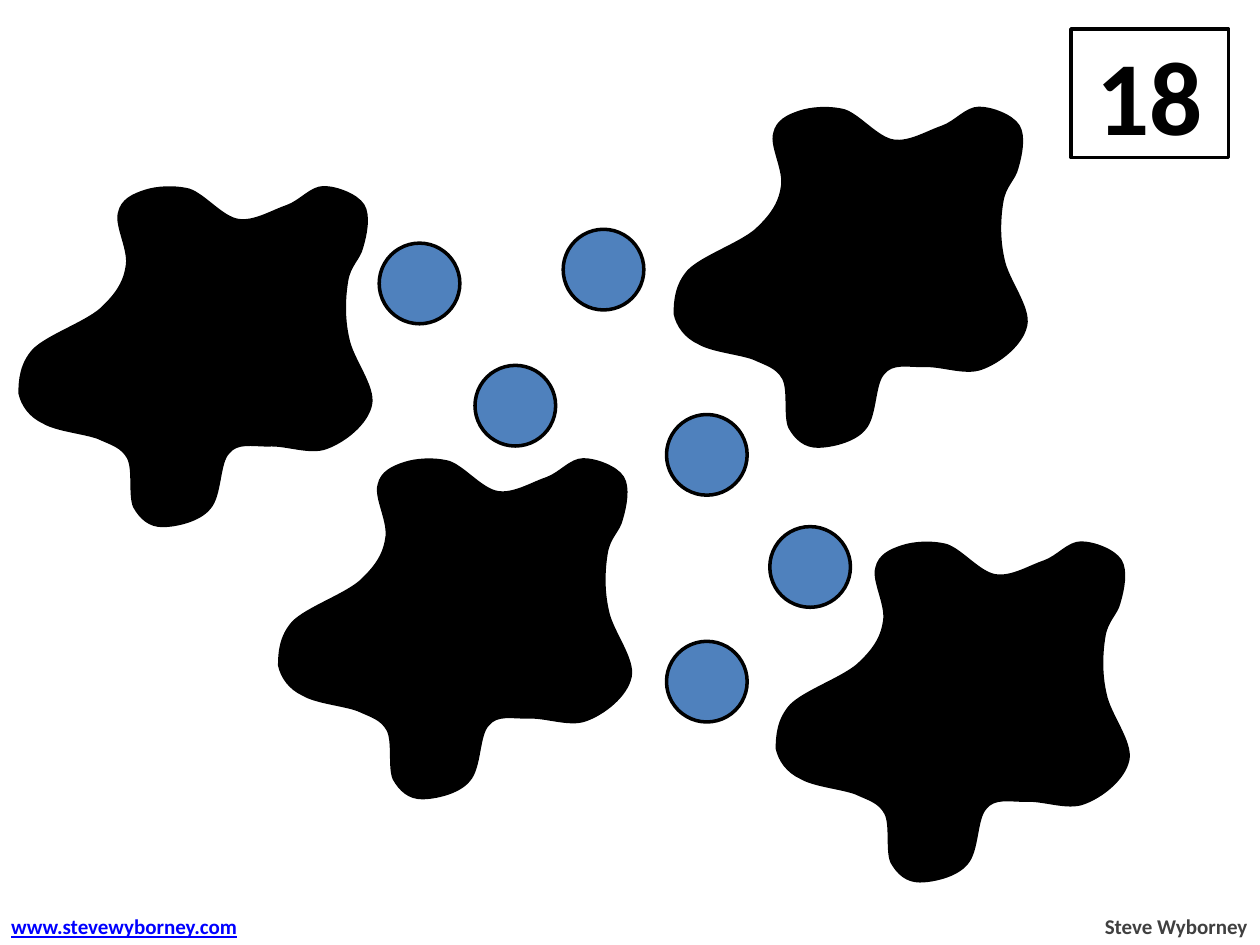
from lxml import etree
from pptx import Presentation
from pptx.dml.color import RGBColor
from pptx.enum.shapes import MSO_SHAPE
from pptx.enum.text import MSO_ANCHOR, PP_ALIGN
from pptx.oxml.ns import qn
from pptx.util import Inches, Pt

COLORS = {"black": "000000", "white": "FFFFFF", "dot": "4F81BD",
          "web": "0000FF", "author": "404040"}
FONT = "Calibri"

presentation = Presentation()
presentation.slide_width, presentation.slide_height = Inches(10), Inches(7.5)
slide = presentation.slides.add_slide(presentation.slide_layouts[6])

# The slide is a grid of 10 columns by 7.5 rows of square cells.
CELL = presentation.slide_width // 10


def paint(shape, fill):
    shape.shadow.inherit = False
    shape.fill.solid()
    shape.fill.fore_color.rgb = RGBColor.from_string(COLORS[fill])
    shape.line.color.rgb = RGBColor.from_string(COLORS["black"])
    shape.line.width = Pt(2)


def write(shape, text, size, color, align, underline=False):
    paragraph = shape.text_frame.paragraphs[0]
    paragraph.alignment = align
    run = paragraph.add_run()
    run.text = text
    run.font.name, run.font.size, run.font.bold = FONT, Pt(size), True
    run.font.underline = underline
    run.font.color.rgb = RGBColor.from_string(COLORS[color])


# Number card
card = slide.shapes.add_shape(
    MSO_SHAPE.RECTANGLE, *(int(CELL * n) for n in (8.5, 0.23, 1.25, 1.02)))
paint(card, "white")
card.text_frame.vertical_anchor = MSO_ANCHOR.MIDDLE
write(card, "18", 60, "black", PP_ALIGN.CENTER)

# Footer
footers = [
    (8.66, 1.34, "Steve Wyborney", "author", PP_ALIGN.RIGHT, False),
    (-0.01, 2.05, "www.stevewyborney.com", "web", PP_ALIGN.LEFT, True),
]
for left, width, text, color, align, underline in footers:
    footer = slide.shapes.add_textbox(
        *(int(CELL * n) for n in (left, 7.2, width, 0.3)))
    footer.text_frame.word_wrap = False
    write(footer, text, 12, color, align, underline)

# Eighteen dots to count, twelve of them under the splats
DOT_SIZE = 0.64
DOTS = [(2.68, 4.89), (4.47, 1.82), (1.23, 1.82), (4.1, 4.97), (5.29, 5.09),
        (0.98, 3.11), (3.77, 2.9), (2.01, 2.51), (6.11, 4.18), (3.01, 1.93),
        (5.64, 2.06), (6.59, 2.24), (3.17, 3.92), (5.29, 3.29), (7.36, 4.57),
        (7.72, 5.49), (6.62, 5.61), (7.18, 1.25)]
dots = slide.shapes.add_group_shape()
for left, top in DOTS:
    dot = dots.shapes.add_shape(
        MSO_SHAPE.OVAL,
        *(int(CELL * n) for n in (left, top, DOT_SIZE, DOT_SIZE)))
    paint(dot, "dot")

# Ink splats: each row holds two control points and the end of a cubic curve,
# as seen after the quarter turn
SPLAT_WIDTH = 2.68
SPLAT_CURVES = [
    (0.08, 1.81, 0.02, 1.72, 0, 1.63),
    (0, 1.53, 0.01, 1.4, 0.11, 1.29),
    (0.22, 1.18, 0.51, 1.08, 0.64, 0.97),
    (0.76, 0.86, 0.83, 0.76, 0.85, 0.63),
    (0.88, 0.5, 0.76, 0.3, 0.79, 0.2),
    (0.81, 0.1, 0.9, 0.06, 0.99, 0.03),
    (1.08, 0, 1.22, -0.01, 1.34, 0.02),
    (1.46, 0.06, 1.6, 0.24, 1.73, 0.26),
    (1.86, 0.28, 2, 0.19, 2.12, 0.15),
    (2.23, 0.11, 2.31, 0, 2.41, 0),
    (2.51, 0, 2.67, 0.06, 2.72, 0.14),
    (2.77, 0.22, 2.74, 0.37, 2.71, 0.47),
    (2.69, 0.56, 2.61, 0.61, 2.59, 0.74),
    (2.57, 0.86, 2.56, 1.03, 2.6, 1.2),
    (2.63, 1.36, 2.81, 1.58, 2.78, 1.72),
    (2.75, 1.87, 2.57, 2.01, 2.43, 2.06),
    (2.3, 2.11, 2.11, 2.03, 1.97, 2.04),
    (1.84, 2.04, 1.72, 2.01, 1.65, 2.1),
    (1.57, 2.18, 1.59, 2.44, 1.5, 2.54),
    (1.42, 2.64, 1.23, 2.68, 1.13, 2.68),
    (1.03, 2.68, 0.96, 2.62, 0.91, 2.53),
    (0.87, 2.44, 0.91, 2.23, 0.86, 2.14),
    (0.81, 2.05, 0.73, 2.03, 0.62, 1.98),
    (0.51, 1.94, 0.29, 1.92, 0.19, 1.86),
]
# Turned back by 90 degrees, (x, y) becomes (width - y, x).
curves = [[(int(CELL * (SPLAT_WIDTH - y)), int(CELL * x))
           for x, y in zip(curve[::2], curve[1::2])]
          for curve in SPLAT_CURVES]
ends = [curve[-1] for curve in curves]

for left, top in [(0.21, 1.44), (6.22, 4.26), (2.27, 3.6), (5.41, 0.81)]:
    builder = slide.shapes.build_freeform(*ends[-1])
    builder.add_line_segments(ends, close=True)
    splat = builder.convert_to_shape(int(CELL * left), int(CELL * top))
    splat.rotation = 270
    # Bend every straight segment into its cubic curve.
    segments = list(splat.element.iter(qn("a:lnTo")))
    for segment, curve in zip(segments, curves):
        bend = etree.Element(qn("a:cubicBezTo"))
        for x, y in curve:
            etree.SubElement(bend, qn("a:pt"), x=str(x), y=str(y))
        segment.getparent().replace(segment, bend)
    paint(splat, "black")

presentation.save("out.pptx")
